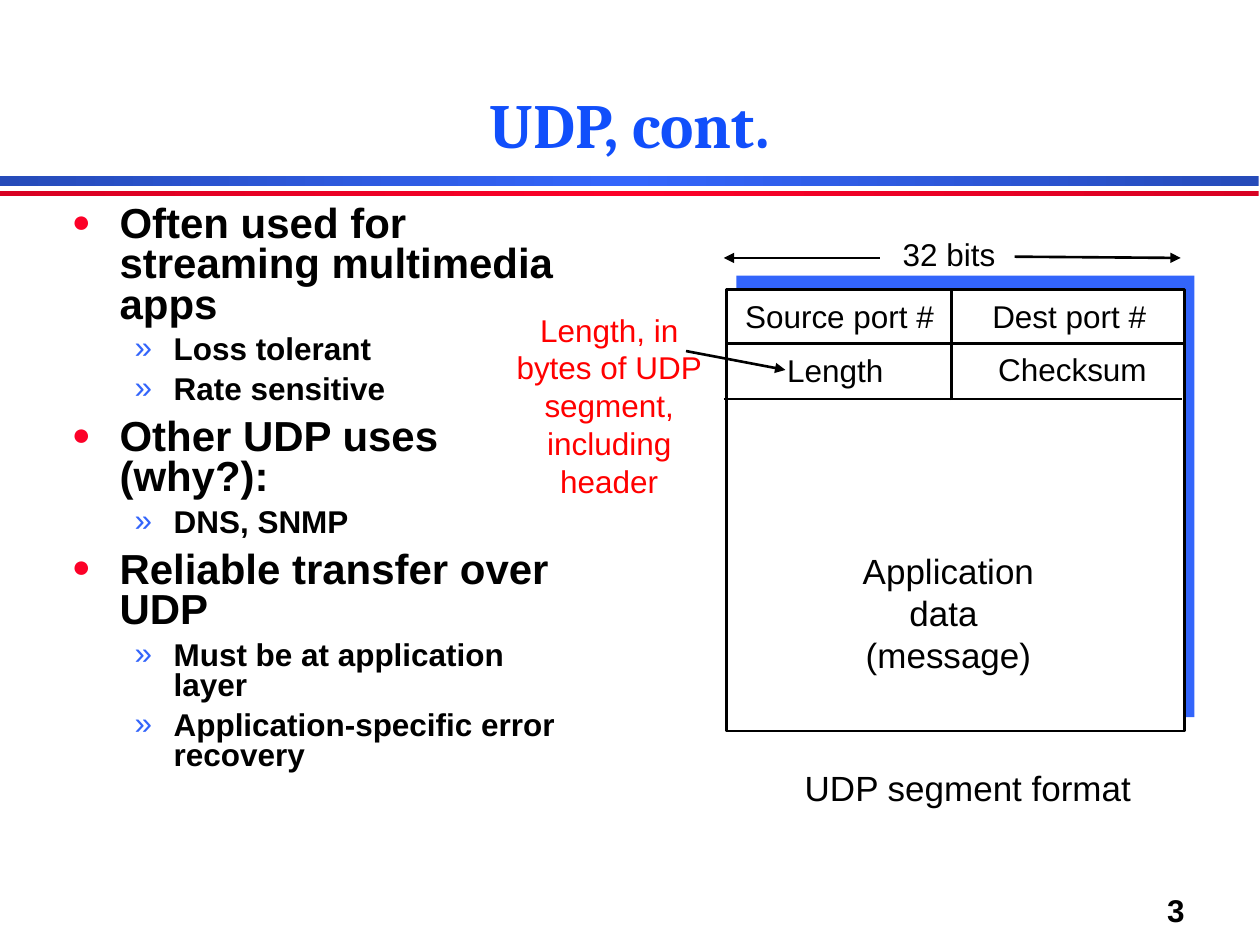
from copy import deepcopy

from pptx import Presentation
from pptx.dml.color import RGBColor
from pptx.enum.shapes import MSO_CONNECTOR as CONNECTOR, MSO_SHAPE as SHAPE
from pptx.enum.text import MSO_ANCHOR as ANCHOR, MSO_AUTO_SIZE as AUTO_SIZE, PP_ALIGN as ALIGN
from pptx.oxml.ns import qn
from pptx.util import Inches, Pt
from lxml.etree import SubElement

COLORS = {
    "black": "000000", "white": "FFFFFF", "title": "114FFB", "note": "FF0000",
    "blue": "3365FB", "dark blue": "264BB9", "red": "FC0128", "dark red": "D80122",
}


def color(name):
    return RGBColor.from_string(COLORS[name])


def write(para, text, size=18, font="Arial", ink="black", bold=False, align=ALIGN.CENTER):
    para.alignment = align
    span = para.add_run()
    span.text = text
    span.font.size = Pt(size)
    span.font.name = font
    span.font.bold = bold
    span.font.color.rgb = color(ink)


deck = Presentation()
deck.slide_width, deck.slide_height = Inches(10.01), Inches(7.51)
page = deck.slides.add_slide(deck.slide_layouts[1])
shapes = page.shapes

# Title and the two gradient rules below it
title, body = page.placeholders
title.left, title.top, title.width, title.height = map(Inches, (1.09, 0.09, 7.83, 1.25))
title.text_frame.vertical_anchor = ANCHOR.BOTTOM
title.text_frame.auto_size = AUTO_SIZE.NONE
heading = title.text_frame.paragraphs[0]
heading.line_spacing = 0.89
write(heading, "UDP, cont.", size=36, font="Cambria", ink="title", bold=True)

for top, height, edge, middle in [(1.4, 0.08, "dark blue", "blue"),
                                  (1.52, 0.04, "dark red", "red")]:
    rule = shapes.add_shape(SHAPE.RECTANGLE, 0, Inches(top), Inches(10), Inches(height))
    rule.shadow.inherit = False
    rule.line.fill.background()
    rule.fill.gradient()
    rule.fill.gradient_angle = 0
    stop_list = rule._element.xpath(".//a:gsLst")[0]
    stop_list.append(deepcopy(stop_list[0]))
    for stop, position, name in zip(rule.fill.gradient_stops, (0, 0.5, 1), (edge, middle, edge)):
        stop.position = position
        stop.color.rgb = color(name)

# Bulleted list: level, text
body.left, body.top, body.width, body.height = map(Inches, (0.47, 1.59, 4.17, 5.59))
body.text_frame.auto_size = AUTO_SIZE.NONE
POINTS = [
    (0, "Often used for streaming multimedia apps"),
    (1, "Loss tolerant"),
    (1, "Rate sensitive"),
    (0, "Other UDP uses (why?):"),
    (1, "DNS, SNMP"),
    (0, "Reliable transfer over UDP"),
    (1, "Must be at application layer"),
    (1, "Application-specific error recovery"),
]
LEVELS = [  # text size, left margin, hanging indent, bullet, its colour, its size
    (24, 0.38, 0.38, "●", "red", "75000"),
    (18, 0.81, 0.31, "»", "blue", "100000"),
]
for index, (level, text) in enumerate(POINTS):
    para = body.text_frame.add_paragraph() if index else body.text_frame.paragraphs[0]
    size, margin, hanging, bullet, bullet_color, bullet_size = LEVELS[level]
    para.level = level
    para.line_spacing = 0.8
    para.space_before = Pt(size * 0.3)
    write(para, text, size=size, bold=True, align=ALIGN.LEFT)
    properties = para._p.get_or_add_pPr()
    properties.set("marL", str(Inches(margin)))
    properties.set("indent", str(-Inches(hanging)))
    bullet_ink = SubElement(properties, qn("a:buClr"))
    SubElement(bullet_ink, qn("a:srgbClr"), val=COLORS[bullet_color])
    SubElement(properties, qn("a:buSzPct"), val=bullet_size)
    SubElement(properties, qn("a:buFont"), typeface="Arial")
    SubElement(properties, qn("a:buChar"), char=bullet)

# Segment frame in front of its blue backing
for left, top, fill in [(5.85, 2.19, "blue"), (5.77, 2.3, "white")]:
    frame = shapes.add_shape(SHAPE.RECTANGLE, Inches(left), Inches(top), Inches(3.64), Inches(3.51))
    frame.shadow.inherit = False
    frame.fill.solid()
    frame.fill.fore_color.rgb = color(fill)
    frame.line.fill.background()
frame.line.color.rgb = color("black")
frame.line.width = Pt(1.5)

# Field dividers and arrows: start, end, arrowhead at the end
LINES = [
    (5.76, 2.73, 9.4, 2.73, False),
    (5.75, 3.17, 9.39, 3.17, False),
    (7.56, 2.73, 7.56, 2.3, False),
    (7.56, 3.18, 7.56, 2.74, False),
    (8.06, 2.04, 9.38, 2.05, True),
    (6.99, 2.05, 5.75, 2.05, True),
    (5.45, 2.79, 6.24, 2.94, True),
]
for *ends, arrow in LINES:
    line = shapes.add_connector(CONNECTOR.STRAIGHT, *map(Inches, ends))
    line.line.color.rgb = color("black")
    line.line.width = Pt(1.5)
    if arrow:
        SubElement(line.line._get_or_add_ln(), qn("a:tailEnd"), type="triangle")
    SubElement(line._element.spPr, qn("a:effectLst"))

# Labels: left, top, width, height, lines, format
LABELS = [
    (5.82, 2.31, 1.7, 0.4, ["Source port #"], {}),
    (7.78, 2.31, 1.43, 0.4, ["Dest port #"], {}),
    (6.15, 2.74, 0.97, 0.4, ["Length"], {}),
    (7.83, 2.73, 1.38, 0.4, ["Checksum"], {}),
    (7.07, 1.82, 0.94, 0.4, ["32 bits"], {}),
    (6.75, 4.32, 1.57, 1.1, ["Application", "data ", "(message)"], {"size": 20}),
    (6.29, 6.04, 2.8, 0.44, ["UDP segment format"], {"size": 20}),
    (4, 2.42, 1.68, 1.6, ["Length, in", "bytes of UDP", "segment,", "including", "header"],
     {"ink": "note"}),
    (9.01, 7.03, 0.5, 0.4, ["3"], {"bold": True, "align": ALIGN.RIGHT}),
]
for *place, lines, style in LABELS:
    box = shapes.add_textbox(*map(Inches, place))
    box.text_frame.word_wrap = False
    box.text_frame.auto_size = AUTO_SIZE.SHAPE_TO_FIT_TEXT
    for index, text in enumerate(lines):
        para = box.text_frame.add_paragraph() if index else box.text_frame.paragraphs[0]
        write(para, text, **style)

deck.save("out.pptx")
